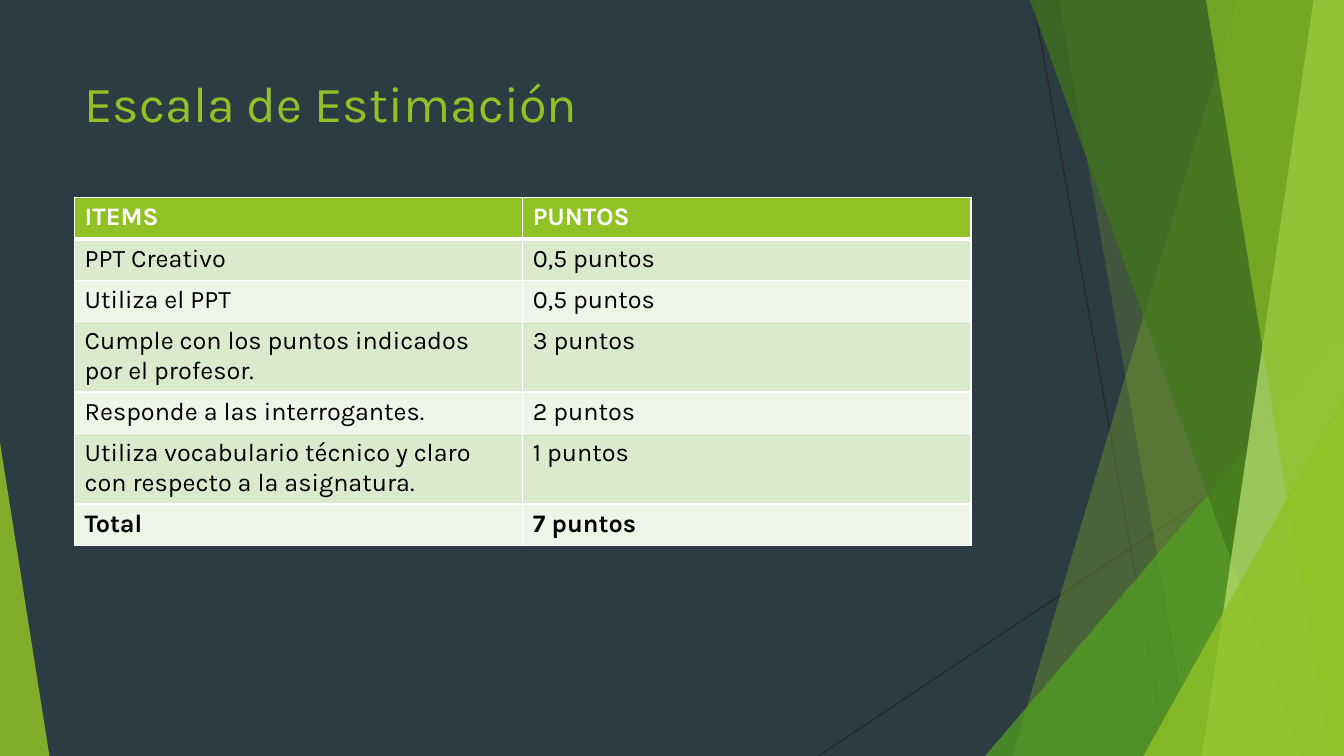
from dataclasses import dataclass

from lxml import etree
from pptx import Presentation
from pptx.dml.color import RGBColor
from pptx.enum.shapes import MSO_CONNECTOR, MSO_SHAPE
from pptx.oxml.ns import qn
from pptx.util import Inches, Pt

STRAIGHT = MSO_CONNECTOR.STRAIGHT
TRIANGLE = MSO_SHAPE.ISOSCELES_TRIANGLE

SLIDE_W, SLIDE_H = 13.33, 7.5
FACET_TOP = -0.01


@dataclass(frozen=True)
class Theme:
    font: str = "Karla"
    background: str = "2C3C43"
    green: str = "90C226"
    mid_green: str = "54A021"
    dark_green: str = "3F7819"
    pale_green: str = "C0E474"
    thin_line: str = "262626"
    band_dark: str = "DBE9CD"
    band_light: str = "EEF4E8"
    white: str = "FFFFFF"
    black: str = "000000"
    title_size: int = 36
    table_size: int = 18


THEME = Theme()


@dataclass(frozen=True)
class Ray:
    x1: float
    y1: float
    x2: float
    y2: float


@dataclass(frozen=True)
class Facet:
    """Panel reaching the right slide edge, with a slanted left side."""
    top_x: float
    bottom_x: float
    color: str
    opacity: int


@dataclass(frozen=True)
class Corner:
    """Triangle standing on the bottom slide edge; apex runs from 0 to 1."""
    left: float
    top: float
    width: float
    apex: float
    color: str
    opacity: int


RAYS = [Ray(10.25, 0, 11.58, SLIDE_H), Ray(SLIDE_W, 4.03, 8.12, SLIDE_H)]

DECORATION = [
    Facet(12.28, 10.04, THEME.green, 30),
    Facet(10.5, 11.83, THEME.green, 20),
    Corner(9.77, 3.33, 3.56, 1, THEME.mid_green, 72),
    Facet(10.21, 12.91, THEME.dark_green, 70),
    Facet(13.03, 11.92, THEME.pale_green, 70),
    Facet(11.96, 13.18, THEME.green, 65),
    Corner(11.34, 3.93, 1.99, 1, THEME.green, 80),
    Corner(0, 4.39, 0.49, 0, THEME.green, 85),
]

SCORES = [
    ("ITEMS", "PUNTOS"),
    ("PPT Creativo", "0,5 puntos"),
    ("Utiliza el PPT", "0,5 puntos"),
    ("Cumple con los puntos indicados por el profesor.", "3 puntos"),
    ("Responde a las interrogantes.", "2 puntos"),
    ("Utiliza vocabulario técnico y claro con respecto a la asignatura.", "1 puntos"),
    ("Total", "7 puntos"),
]


def rgb(color: str) -> RGBColor:
    return RGBColor.from_string(color)


def style_font(font, size: int, color: str, bold: bool = False) -> None:
    font.name = THEME.font
    font.size = Pt(size)
    font.bold = bold
    font.color.rgb = rgb(color)


def add_ray(s, ray: Ray) -> None:
    line = s.shapes.add_connector(
        STRAIGHT, Inches(ray.x1), Inches(ray.y1), Inches(ray.x2), Inches(ray.y2))
    line.line.color.rgb = rgb(THEME.thin_line)
    line.line.width = Pt(0.75)
    etree.SubElement(line._element.spPr, qn("a:effectLst"))


def facet_shape(s, facet: Facet):
    outline = s.shapes.build_freeform(Inches(facet.top_x), Inches(FACET_TOP))
    outline.add_line_segments([
        (Inches(SLIDE_W), Inches(FACET_TOP)),
        (Inches(SLIDE_W), Inches(SLIDE_H)),
        (Inches(facet.bottom_x), Inches(SLIDE_H)),
    ])
    return outline.convert_to_shape()


def corner_shape(s, corner: Corner):
    shape = s.shapes.add_shape(
        TRIANGLE, Inches(corner.left), Inches(corner.top),
        Inches(corner.width), Inches(SLIDE_H - corner.top))
    shape.adjustments[0] = corner.apex
    return shape


def add_decoration(s, item: Facet | Corner) -> None:
    shape = facet_shape(s, item) if isinstance(item, Facet) else corner_shape(s, item)
    shape.shadow.inherit = False
    shape.line.fill.background()
    shape.fill.solid()
    shape.fill.fore_color.rgb = rgb(item.color)
    color = shape._element.spPr.find(qn("a:solidFill"))[0]
    etree.SubElement(color, qn("a:alpha"), val=str(item.opacity * 1000))


def add_title(s, text: str) -> None:
    box = s.shapes.add_textbox(Inches(0.74), Inches(0.67), Inches(9.4), Inches(1.44))
    tf = box.text_frame
    tf.word_wrap = True
    p = tf.paragraphs[0]
    p.text = text
    style_font(p.font, THEME.title_size, THEME.green)


def set_borders(cell, top: int, bottom: int) -> None:
    """Draw white borders, in points; must run before the cell is filled."""
    tc_pr = cell._tc.get_or_add_tcPr()
    for side, width in (("L", 1), ("R", 1), ("T", top), ("B", bottom)):
        ln = etree.SubElement(tc_pr, qn(f"a:ln{side}"), w=str(Pt(width)))
        fill = etree.SubElement(ln, qn("a:solidFill"))
        etree.SubElement(fill, qn("a:srgbClr"), val=THEME.white)


def add_scores(s, rows: list[tuple[str, str]]) -> None:
    height = Inches(3.43)
    frame = s.shapes.add_table(
        len(rows), 2, Inches(0.74), Inches(1.96), Inches(8.89), height)
    table = frame.table
    for i, texts in enumerate(rows):
        table.rows[i].height = Inches(0.41)
        header, total = i == 0, i == len(rows) - 1
        band = THEME.band_dark if i % 2 else THEME.band_light
        for j, text in enumerate(texts):
            cell = table.cell(i, j)
            set_borders(cell, top=3 if i == 1 else 1, bottom=3 if header else 1)
            cell.fill.solid()
            cell.fill.fore_color.rgb = rgb(THEME.green if header else band)
            p = cell.text_frame.paragraphs[0]
            p.text = text
            style_font(p.font, THEME.table_size,
                       THEME.white if header else THEME.black, header or total)
    frame.height = height


def main() -> None:
    prs = Presentation()
    prs.slide_width, prs.slide_height = Inches(SLIDE_W), Inches(SLIDE_H)
    s = prs.slides.add_slide(prs.slide_layouts[6])
    s.background.fill.solid()
    s.background.fill.fore_color.rgb = rgb(THEME.background)
    for ray in RAYS:
        add_ray(s, ray)
    for item in DECORATION:
        add_decoration(s, item)
    add_title(s, "Escala de Estimación")
    add_scores(s, SCORES)
    prs.save("out.pptx")


if __name__ == "__main__":
    main()
